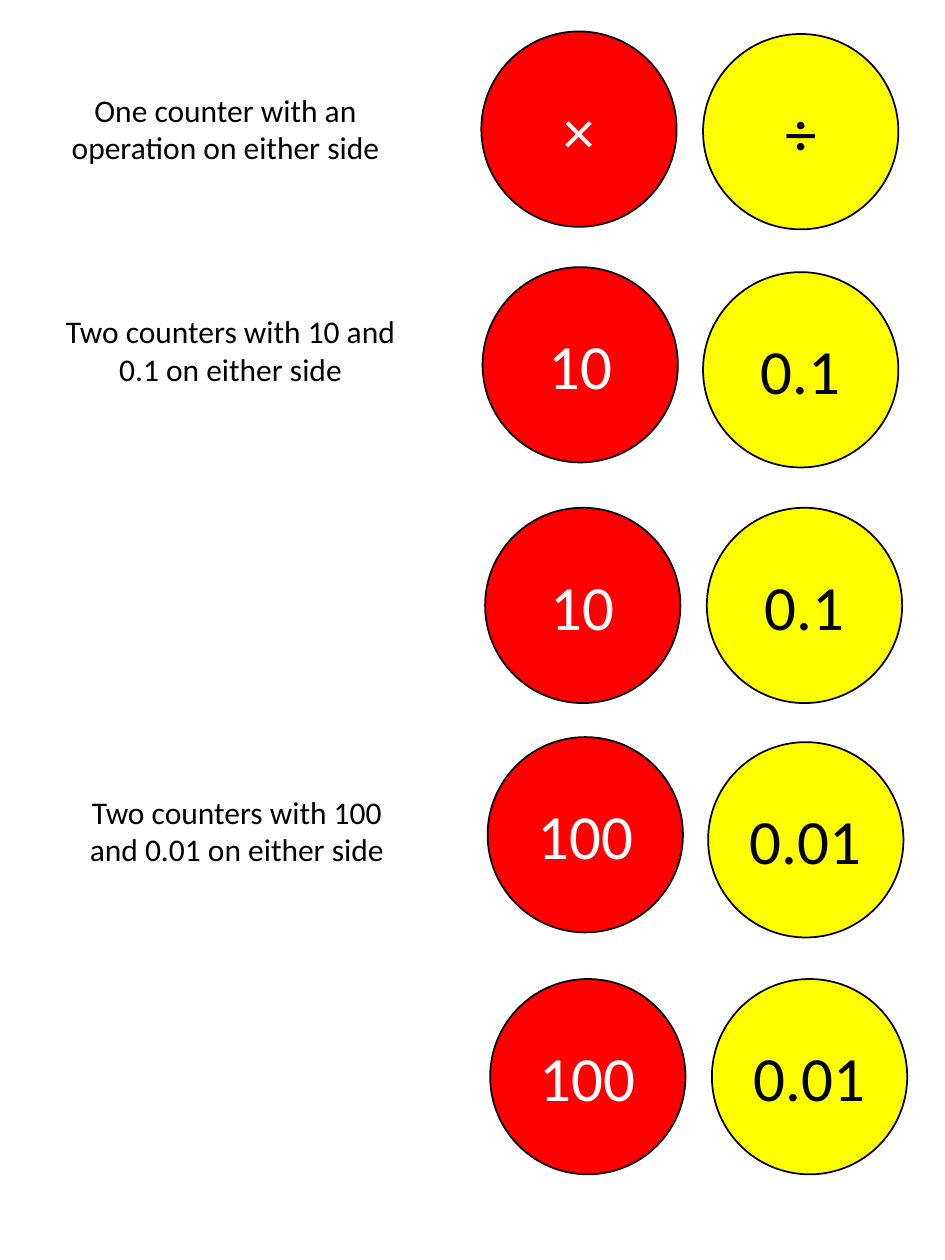
from pptx import Presentation
from pptx.dml.color import RGBColor
from pptx.enum.shapes import MSO_SHAPE
from pptx.enum.text import MSO_ANCHOR, PP_ALIGN
from pptx.util import Inches, Pt

OVAL, RECT = MSO_SHAPE.OVAL, MSO_SHAPE.RECTANGLE
MIDDLE, CENTER = MSO_ANCHOR.MIDDLE, PP_ALIGN.CENTER
COLORS = {"red": "FF0000", "yellow": "FFFF00", "white": "FFFFFF", "black": "000000"}
DIAMETER = 1.55


def add_label(s, kind, box, text, size, fill, color):
    sp = s.shapes.add_shape(kind, *[Inches(v) for v in box])
    sp.shadow.inherit = False
    sp.fill.solid()
    sp.fill.fore_color.rgb = RGBColor.from_string(COLORS[fill])
    sp.line.fill.background()
    tf = sp.text_frame
    tf.word_wrap = True
    tf.vertical_anchor = MIDDLE
    p = tf.paragraphs[0]
    p.text = text
    p.alignment = CENTER
    p.font.name = "Calibri"
    p.font.size = Pt(size)
    p.font.color.rgb = RGBColor.from_string(COLORS[color])
    return sp


prs = Presentation()
prs.slide_width, prs.slide_height = Inches(7.5), Inches(10)
s = prs.slides.add_slide(prs.slide_layouts[6])

counters = [
    ("×", 3.82, 0.25, "÷", 5.58, 0.27),
    ("10", 3.83, 2.12, "0.1", 5.58, 2.16),
    ("10", 3.85, 4.03, "0.1", 5.61, 4.03),
    ("100", 3.87, 5.85, "0.01", 5.62, 5.89),
    ("100", 3.89, 7.77, "0.01", 5.65, 7.77),
]
for front, front_x, front_y, back, back_x, back_y in counters:
    for text, x, y, fill, color in [
        (front, front_x, front_y, "red", "white"),
        (back, back_x, back_y, "yellow", "black"),
    ]:
        sp = add_label(s, OVAL, (x, y, DIAMETER, DIAMETER), text, 36, fill, color)
        sp.line.color.rgb = RGBColor.from_string(COLORS["black"])
        sp.line.width = Pt(1)

captions = [
    ("One counter with an operation on either side", 0.37, 0.6),
    ("Two counters with 10 and 0.1 on either side", 0.41, 2.36),
    ("Two counters with 100 and 0.01 on either side", 0.46, 6.17),
]
for text, x, y in captions:
    add_label(s, RECT, (x, y, 2.84, 0.84), text, 18, "white", "black")

prs.save("out.pptx")
